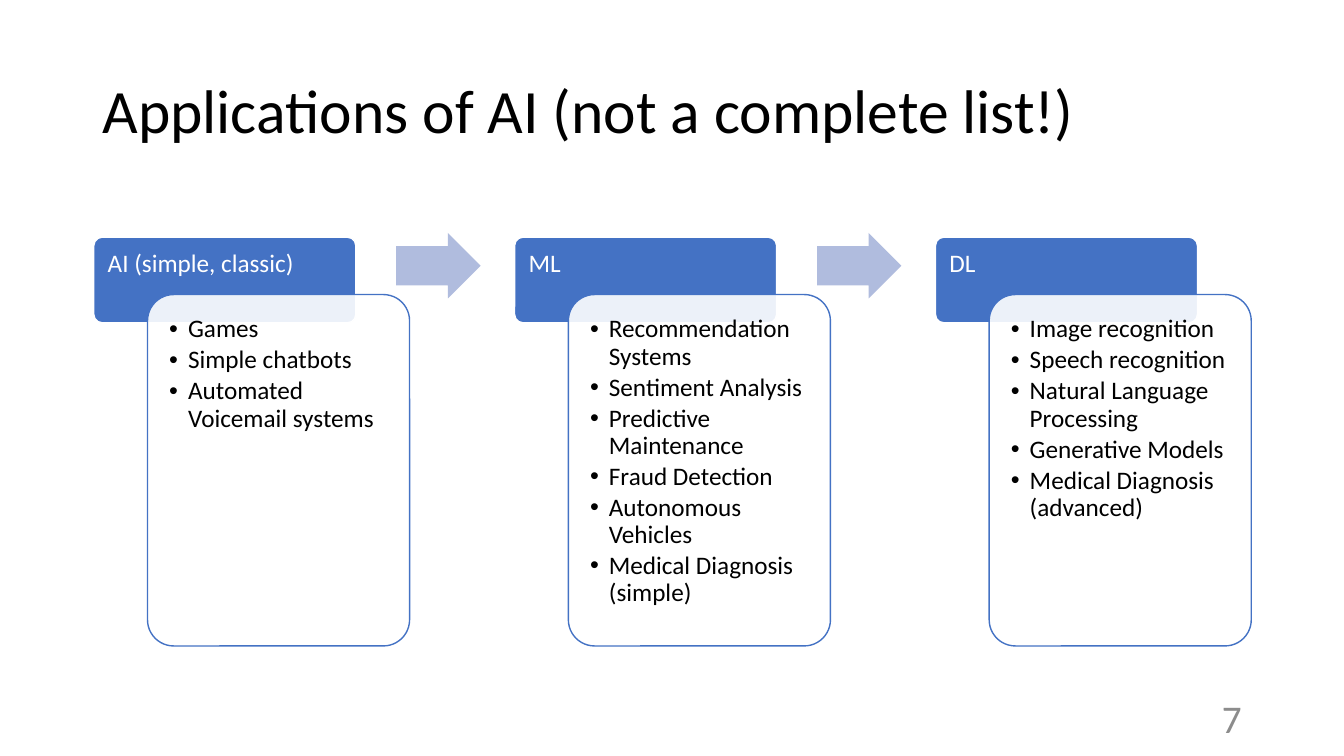
from lxml import etree
from pptx import Presentation
from pptx.dml.color import RGBColor
from pptx.enum.shapes import MSO_SHAPE as SHAPE
from pptx.enum.text import MSO_ANCHOR as ANCHOR, PP_ALIGN as ALIGN
from pptx.oxml.ns import qn
from pptx.util import Pt

BLUE, PALE, WHITE, BLACK, GREY = "4472C4", "B0BCDE", "FFFFFF", "000000", "8C8C8C"
STAGES = [
    ("AI (simple, classic)",
     ["Games", "Simple chatbots", "Automated Voicemail systems"]),
    ("ML",
     ["Recommendation Systems", "Sentiment Analysis", "Predictive Maintenance",
      "Fraud Detection", "Autonomous Vehicles", "Medical Diagnosis (simple)"]),
    ("DL",
     ["Image recognition", "Speech recognition", "Natural Language Processing",
      "Generative Models", "Medical Diagnosis (advanced)"]),
]


def rgb(value):
    return RGBColor.from_string(value)


def set_attrs(obj, values):
    for name, value in values.items():
        setattr(obj, name, value)


def place(sp, x, y, w, h):
    set_attrs(sp, dict(left=Pt(x), top=Pt(y), width=Pt(w), height=Pt(h)))


def write(sp, lines, size, color, inset=(7.2, 3.6), anchor=ANCHOR.TOP,
          align=ALIGN.LEFT, bullet=False):
    tf = sp.text_frame
    dx, dy = map(Pt, inset)
    set_attrs(tf, dict(word_wrap=True, vertical_anchor=anchor, margin_left=dx,
                       margin_right=dx, margin_top=dy, margin_bottom=dy))
    for i, line in enumerate(lines):
        p = tf.add_paragraph() if i else tf.paragraphs[0]
        set_attrs(p, dict(alignment=align, line_spacing=0.9))
        r = p.add_run()
        r.text = line
        set_attrs(r.font, dict(name="Calibri", size=Pt(size)))
        r.font.color.rgb = rgb(color)
        if bullet:
            p.space_after = Pt(2.7)
            pPr = p._p.get_or_add_pPr()
            pPr.set("marL", str(Pt(13.5)))
            pPr.set("indent", str(Pt(-13.5)))
            etree.SubElement(pPr, qn("a:buFont"), typeface="Arial")
            etree.SubElement(pPr, qn("a:buChar"), char="•")


def add_block(slide, kind, box, adjust, fill, line=None, alpha=None):
    sp = slide.shapes.add_shape(kind, *map(Pt, box))
    sp.shadow.inherit = False
    for i, value in enumerate(adjust):
        sp.adjustments[i] = value
    sp.fill.solid()
    sp.fill.fore_color.rgb = rgb(fill)
    if alpha:
        clr = sp._element.spPr.find(qn("a:solidFill"))[0]
        etree.SubElement(clr, qn("a:alpha"), val=str(alpha * 1000))
    if line:
        sp.line.color.rgb = rgb(line)
        sp.line.width = Pt(1)
    else:
        sp.line.fill.background()
    return sp


def add_title(slide, text, box):
    sp = slide.shapes.title
    place(sp, *box)
    write(sp, [text], 44, BLACK, anchor=ANCHOR.MIDDLE)


def add_stage(slide, heading, items, box):
    x, y, w, h = box
    card_w, dx, dy = 187.2, w - 187.2, 41
    # Heading block
    head = add_block(slide, SHAPE.ROUNDED_RECTANGLE, (x, y, card_w, 61.2),
                     [0.1], BLUE, WHITE)
    write(head, [heading], 18, WHITE, inset=(8.2, 8.2))
    # Overlapping card with the list
    card = add_block(slide, SHAPE.ROUNDED_RECTANGLE,
                     (x + dx, y + dy, card_w, h - dy), [0.1], WHITE, BLUE, 90)
    write(card, items, 18, BLACK, inset=(10, 10), bullet=True)


def add_process(slide, stages, box):
    x, y, w, h = box
    stage_w = 225.6
    pitch = (w - stage_w) / (len(stages) - 1)
    for i, (heading, items) in enumerate(stages):
        left = x + i * pitch
        add_stage(slide, heading, items, (left, y, stage_w, h))
        # Arrow to the next stage
        if i < len(stages) - 1:
            add_block(slide, SHAPE.RIGHT_ARROW, (left + 216, y - 3, 60.3, 46.8),
                      [0.6, 0.5], PALE)


def add_page_number(slide, number, box):
    sp = slide.shapes.add_textbox(*map(Pt, box))
    write(sp, [number], 28, GREY, anchor=ANCHOR.MIDDLE, align=ALIGN.RIGHT)


def main():
    prs = Presentation()
    set_attrs(prs, dict(slide_width=Pt(960), slide_height=Pt(540)))
    slide = prs.slides.add_slide(prs.slide_layouts[5])
    add_title(slide, "Applications of AI (not a complete list!)",
              (66, 28.8, 828, 104.4))
    add_process(slide, STAGES, (67, 169.4, 826.8, 292))
    add_page_number(slide, "7", (678, 500.4, 216, 28.8))
    prs.save("out.pptx")


if __name__ == "__main__":
    main()
